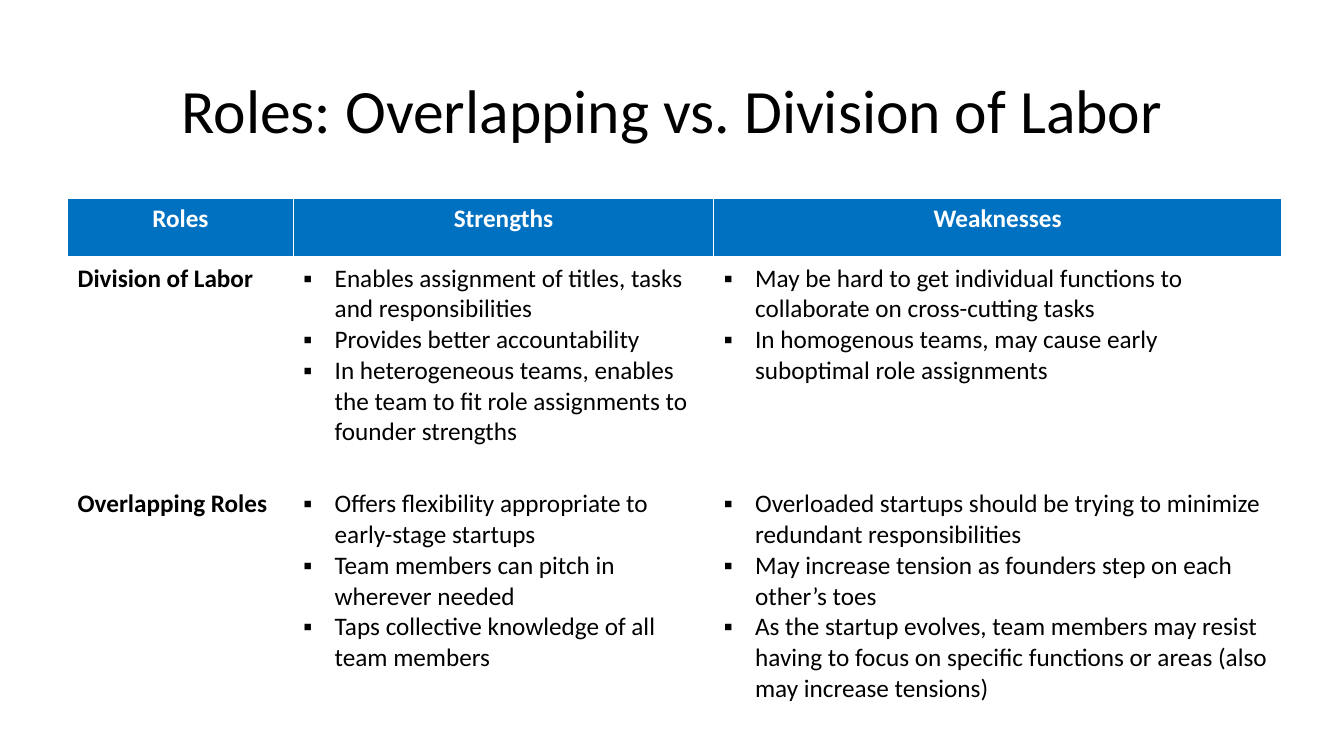
from dataclasses import dataclass

from lxml import etree
from pptx import Presentation
from pptx.dml.color import RGBColor
from pptx.enum import text
from pptx.oxml import ns
from pptx.util import Inches, Pt


@dataclass(frozen=True)
class Theme:
    font: str = "Calibri"
    ink: str = "000000"
    paper: str = "FFFFFF"
    accent: str = "0070C0"
    title_size: int = 44
    body_size: int = 18
    bullet: str = "▪"
    bullet_indent: float = 0.31


HEADINGS = ["Roles", "Strengths", "Weaknesses"]
ROLES = [
    (
        "Division of Labor",
        [
            "Enables assignment of titles, tasks and responsibilities",
            "Provides better accountability",
            "In heterogeneous teams, enables the team to fit role assignments to founder strengths",
        ],
        [
            "May be hard to get individual functions to collaborate on cross-cutting tasks",
            "In homogenous teams, may cause early suboptimal role assignments",
        ],
    ),
    (
        "Overlapping Roles",
        [
            "Offers flexibility appropriate to early-stage startups",
            "Team members can pitch in wherever needed",
            "Taps collective knowledge of all team members",
        ],
        [
            "Overloaded startups should be trying to minimize redundant responsibilities",
            "May increase tension as founders step on each other’s toes",
            "As the startup evolves, team members may resist having to focus on specific "
            "functions or areas (also may increase tensions)",
        ],
    ),
]


class SlideBuilder:
    def __init__(self, page, theme):
        self.page = page
        self.theme = theme

    def format_text(self, frame, size, color, bold=False, align=text.PP_ALIGN.LEFT):
        for para in frame.paragraphs:
            para.alignment = align
            for span in para.runs:
                span.font.name = self.theme.font
                span.font.size = Pt(size)
                span.font.bold = bold
                span.font.color.rgb = RGBColor.from_string(color)

    def title(self, wording, left, top, width, height):
        box = self.page.shapes.title
        box.left, box.top = Inches(left), Inches(top)
        box.width, box.height = Inches(width), Inches(height)
        frame = box.text_frame
        frame.text = wording
        frame.word_wrap = True
        frame.auto_size = text.MSO_AUTO_SIZE.NONE
        frame.vertical_anchor = text.MSO_ANCHOR.MIDDLE
        frame.paragraphs[0].line_spacing = 0.9
        self.format_text(frame, self.theme.title_size, self.theme.ink,
                         align=text.PP_ALIGN.CENTER)

    def add_bullets(self, frame):
        indent = Inches(self.theme.bullet_indent)
        for para in frame.paragraphs:
            props = para._p.get_or_add_pPr()
            props.set("marL", str(indent))
            props.set("indent", str(-indent))
            etree.SubElement(props, ns.qn("a:buFont"), typeface=self.theme.font)
            etree.SubElement(props, ns.qn("a:buChar"), char=self.theme.bullet)

    def set_borders(self, cell, bottom):
        """Draw the four cell edges in the paper colour, 1 pt except the bottom."""
        props = cell._tc.get_or_add_tcPr()
        widths = {"lnL": 1, "lnR": 1, "lnT": 1, "lnB": bottom}
        for position, (edge, points) in enumerate(widths.items()):
            line = etree.Element(ns.qn(f"a:{edge}"), w=str(Pt(points)))
            fill = etree.SubElement(line, ns.qn("a:solidFill"))
            etree.SubElement(fill, ns.qn("a:srgbClr"), val=self.theme.paper)
            props.insert(position, line)

    def cell(self, cell, wording, is_header=False):
        """Fill a cell; a list of strings becomes bullets, a single string a bold label."""
        theme = self.theme
        bulleted = isinstance(wording, list)
        frame = cell.text_frame
        frame.text = "\n".join(wording) if bulleted else wording
        self.format_text(
            frame, theme.body_size,
            theme.paper if is_header else theme.ink,
            bold=not bulleted,
            align=text.PP_ALIGN.CENTER if is_header else text.PP_ALIGN.LEFT,
        )
        if bulleted:
            self.add_bullets(frame)
        cell.fill.solid()
        cell.fill.fore_color.rgb = RGBColor.from_string(
            theme.accent if is_header else theme.paper)
        self.set_borders(cell, bottom=3 if is_header else 1)

    def table(self, rows, left, top, widths, heights):
        table = self.page.shapes.add_table(
            len(rows), len(widths), Inches(left), Inches(top),
            Inches(sum(widths)), Inches(sum(heights)),
        ).table
        table.horz_banding = False
        for column, width in zip(table.columns, widths):
            column.width = Inches(width)
        for row, height in zip(table.rows, heights):
            row.height = Inches(height)
        for r, row in enumerate(rows):
            for c, wording in enumerate(row):
                self.cell(table.cell(r, c), wording, is_header=r == 0)


def main():
    deck = Presentation()
    deck.slide_width, deck.slide_height = Inches(13.33), Inches(7.5)
    title_only = deck.slide_layouts[5]
    builder = SlideBuilder(deck.slides.add_slide(title_only), Theme())
    builder.title("Roles: Overlapping vs. Division of Labor", 0.92, 0.4, 11.5, 1.45)
    builder.table([HEADINGS, *ROLES], 0.67, 1.97,
                  widths=[2.24, 4.17, 5.63], heights=[0.59, 2.24, 2.24])
    deck.save("out.pptx")


if __name__ == "__main__":
    main()
